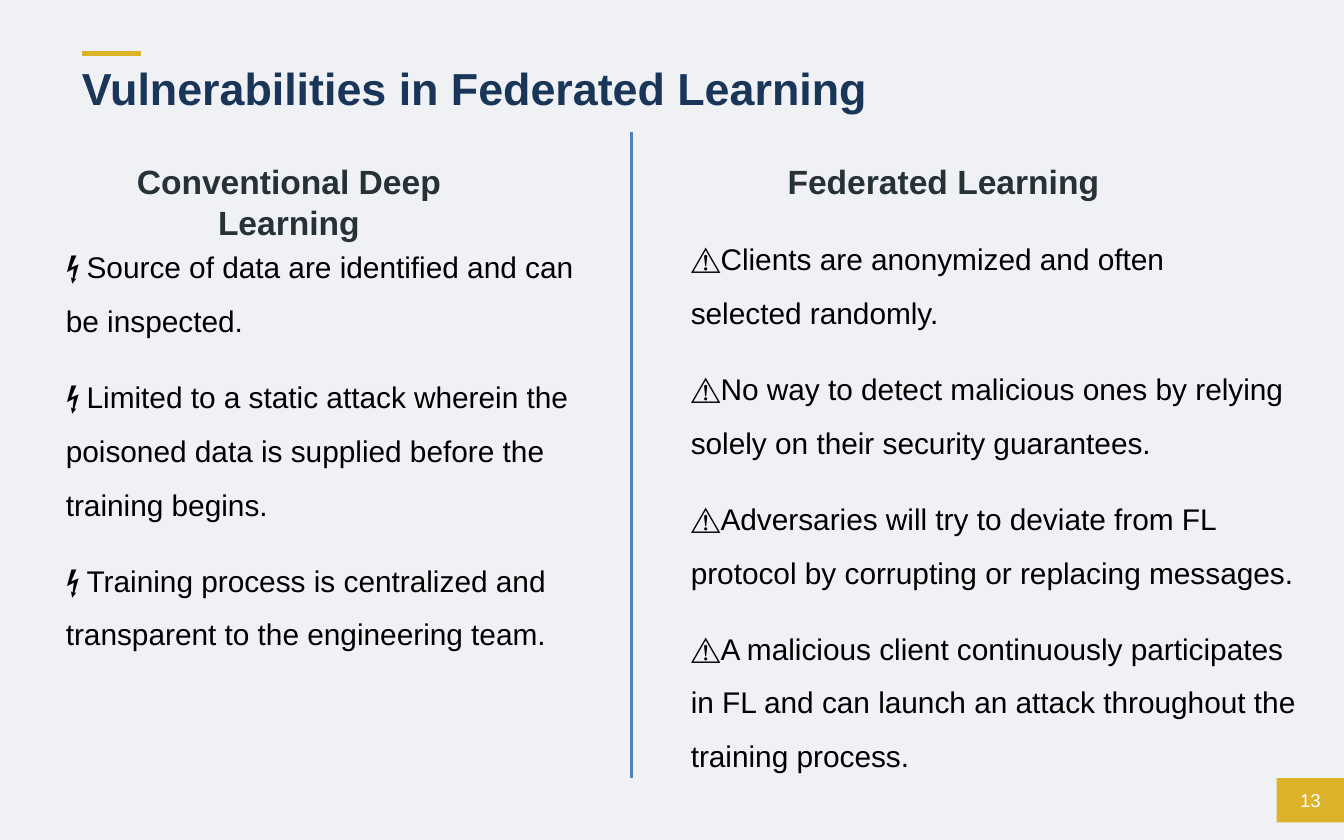
from dataclasses import dataclass
from typing import NamedTuple

from lxml import etree
from pptx import Presentation
from pptx import util as u
from pptx.dml.color import RGBColor
from pptx.enum import shapes, text
from pptx.oxml.ns import qn

CELL = u.Inches(0.1)
COLS, ROWS = 100, 62.5
LEFT, CENTER = text.PP_ALIGN.LEFT, text.PP_ALIGN.CENTER


@dataclass(frozen=True)
class Theme:
    background: str = "EFF1F5"
    gold: str = "DCB328"
    navy: str = "193558"
    slate: str = "263238"
    blue: str = "4F81BD"
    black: str = "000000"
    white: str = "FFFFFF"
    font: str = "Arial"
    icon_font: str = "Calibri"
    title: float = 24
    heading: float = 18
    body: float = 16
    number: float = 10


class Box(NamedTuple):
    col: float
    row: float
    cols: float
    rows: float


class Rule(NamedTuple):
    start: tuple[float, float]
    end: tuple[float, float]
    color: str
    width: float


class Column(NamedTuple):
    heading: str
    heading_box: Box
    body_box: Box
    icon: str
    icon_font: str
    items: list[str]


T = Theme()

RULES = [
    Rule((6.1, 4), (10.5, 4), T.gold, 2.75),
    Rule((47, 9.8), (47, 57.9), T.blue, 1.5),
]

COLUMNS = [
    Column(
        "Conventional Deep Learning", Box(4, 11.5, 35, 4), Box(3.1, 16.7, 42.6, 32.7),
        "⚡ ", T.icon_font,
        [
            "Source of data are identified and can be inspected.",
            "Limited to a static attack wherein the poisoned data is supplied "
            "before the training begins.",
            "Training process is centralized and transparent to the engineering team.",
        ],
    ),
    Column(
        "Federated Learning", Box(57.2, 11.5, 26, 4), Box(49.6, 16.1, 48.7, 41.9),
        "⚠", T.font,
        [
            "Clients are anonymized and often\nselected randomly.",
            "No way to detect malicious ones by relying solely on their security guarantees.",
            "Adversaries will try to deviate from FL protocol by corrupting or "
            "replacing messages.",
            "A malicious client continuously participates in FL and can launch an attack "
            "throughout the training process.",
        ],
    ),
]


def rgb(color: str) -> RGBColor:
    return RGBColor.from_string(color)


def grid(n: float) -> int:
    return round(n * CELL)


def place(sp, box: Box) -> None:
    sp.left, sp.top, sp.width, sp.height = map(grid, box)


def setup_frame(sp, anchor=text.MSO_ANCHOR.TOP, left: float = 0.1, right: float = 0.1):
    tf = sp.text_frame
    tf.word_wrap = True
    tf.auto_size = text.MSO_AUTO_SIZE.NONE
    tf.vertical_anchor = anchor
    tf.margin_left, tf.margin_right = u.Inches(left), u.Inches(right)
    tf.margin_top = tf.margin_bottom = u.Inches(0.05)
    return tf


def write(p, content: str, *, size: float, color: str, font: str = T.font,
          bold: bool = False, align=LEFT, spacing: float = 1.0, after: float = 0) -> None:
    p.alignment = align
    p.line_spacing = spacing
    p.space_before, p.space_after = u.Pt(0), u.Pt(after)
    for i, line in enumerate(content.split("\n")):
        if i:
            p.add_line_break()
        r = p.add_run()
        r.text = line
        r.font.size, r.font.name, r.font.bold = u.Pt(size), font, bold
        r.font.color.rgb = rgb(color)


def remove_bullet(p, margin: float = 0) -> None:
    pPr = p._p.get_or_add_pPr()
    pPr.set("marL", str(u.Inches(margin)))
    pPr.set("indent", "0")
    etree.SubElement(pPr, qn("a:buNone"))


def draw_rule(s, rule: Rule) -> None:
    ends = map(grid, (*rule.start, *rule.end))
    line = s.shapes.add_connector(shapes.MSO_CONNECTOR.STRAIGHT, *ends)
    line.line.color.rgb = rgb(rule.color)
    line.line.width = u.Pt(rule.width)
    etree.SubElement(line._element.spPr, qn("a:effectLst"))


def draw_title(s) -> None:
    sp = s.shapes.title
    place(sp, Box(6.1, 4.5, 73.5, 6.9))
    write(setup_frame(sp, left=0).paragraphs[0], "Vulnerabilities in Federated Learning",
          size=T.title, color=T.navy, bold=True, spacing=0.9)


def draw_column(heading, body, column: Column) -> None:
    place(heading, column.heading_box)
    p = setup_frame(heading).paragraphs[0]
    remove_bullet(p)
    write(p, column.heading, size=T.heading, color=T.slate, bold=True, align=CENTER)

    place(body, column.body_box)
    tf = setup_frame(body)
    for i, item in enumerate(column.items):
        p = tf.add_paragraph() if i else tf.paragraphs[0]
        remove_bullet(p, 0.08)
        for part, font in ((column.icon, column.icon_font), (item, T.font)):
            write(p, part, size=T.body, color=T.black, font=font, spacing=1.5, after=12)


def draw_page_number(s, number: int) -> None:
    box = Box(COLS - 5, 57.9, 5, 3.3)
    sp = s.shapes.add_shape(shapes.MSO_SHAPE.RECTANGLE, *map(grid, box))
    sp.shadow.inherit = False
    sp.fill.solid()
    sp.fill.fore_color.rgb = rgb(T.gold)
    sp.line.fill.background()
    tf = setup_frame(sp, text.MSO_ANCHOR.MIDDLE, left=0, right=0)
    write(tf.paragraphs[0], str(number), size=T.number, color=T.white, align=CENTER)


def main() -> None:
    prs = Presentation()
    prs.slide_width, prs.slide_height = grid(COLS), grid(ROWS)
    s = prs.slides.add_slide(prs.slide_layouts.get_by_name("Comparison"))
    s.background.fill.solid()
    s.background.fill.fore_color.rgb = rgb(T.background)
    draw_title(s)
    for i, column in enumerate(COLUMNS):
        draw_column(s.placeholders[2 * i + 1], s.placeholders[2 * i + 2], column)
    for rule in RULES:
        draw_rule(s, rule)
    draw_page_number(s, 13)
    prs.save("out.pptx")


if __name__ == "__main__":
    main()
